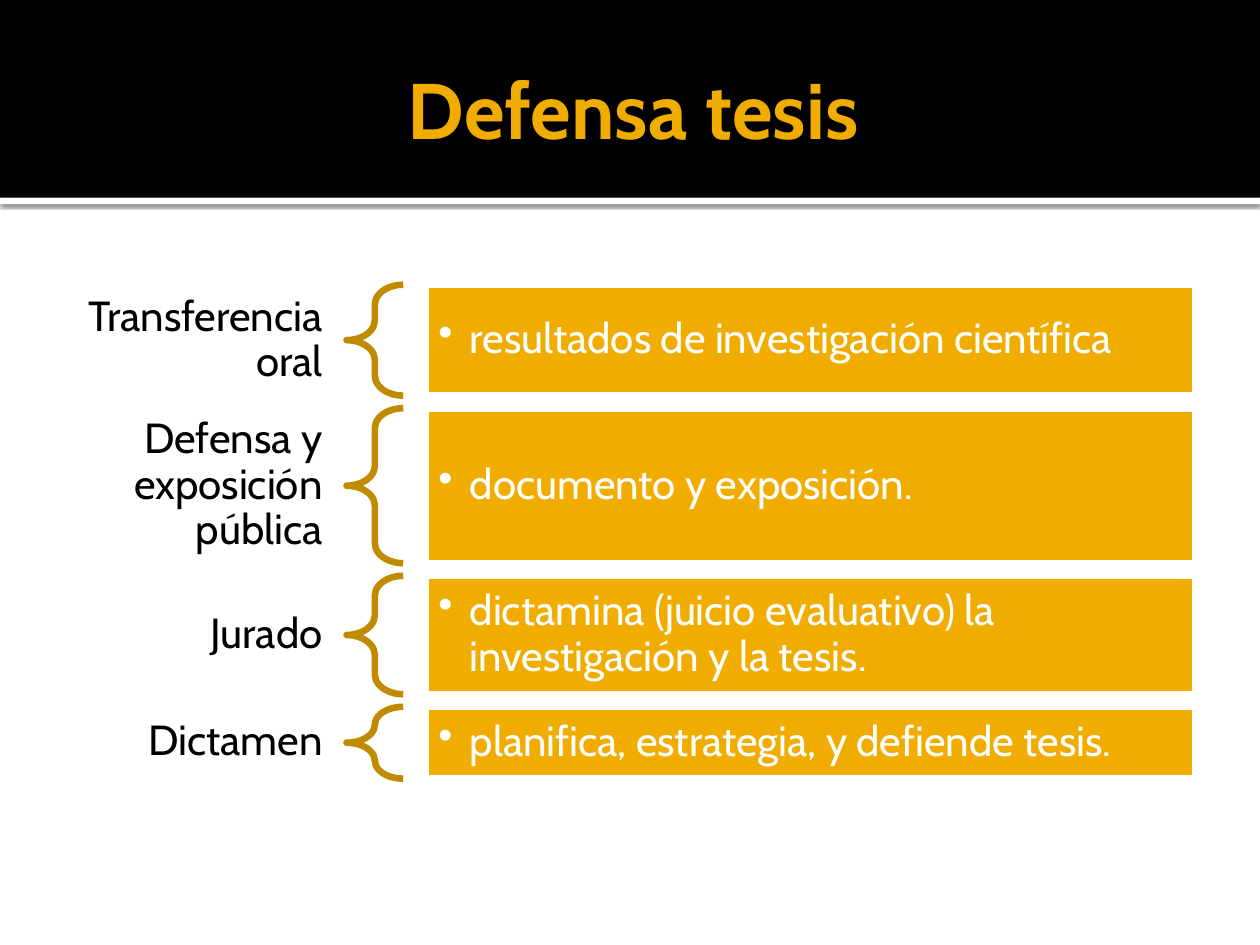
"""Builds the thesis defence slide: a title band above four braced rows."""
from lxml import etree
from pptx import Presentation
from pptx import util as u
from pptx.dml.color import RGBColor
from pptx.enum import shapes, text
from pptx.oxml.ns import qn

PX = 9144
FONT = "Cabin"
COLORS = {"black": "000000", "white": "FFFFFF", "amber": "F0AD00", "brace": "C08B00"}
ROWS = [
    ("Transferencia oral", "resultados de investigación científica", 88, 88),
    ("Defensa y exposición pública", "documento y exposición.", 123, 123),
    ("Jurado", "dictamina (juicio evaluativo) la investigación y la tesis.", 94, 52),
    ("Dictamen", "planifica, estrategia, y defiende tesis.", 57, 52),
]
ROW_GAP = 10


def color(name):
    """Return the named colour."""
    return RGBColor.from_string(COLORS[name])


def px(*lengths):
    """Turn px lengths into EMU."""
    return [u.Emu(length * PX) for length in lengths]


def add_figure(page, kind, box, fill=None, line=None):
    """Add a preset shape with an optional fill and line."""
    figure = page.shapes.add_shape(kind, *px(*box))
    if fill:
        figure.fill.solid()
        figure.fill.fore_color.rgb = color(fill)
    else:
        figure.fill.background()
    if line:
        figure.line.color.rgb = color(line)
        figure.line.width = u.Pt(3.78)
    else:
        figure.line.fill.background()
    figure.shadow.inherit = False
    return figure


def write(shape, words, size, ink, align, insets, bold=False):
    """Set one middle-anchored paragraph in a shape and return it."""
    frame = shape.text_frame
    frame.text = words
    frame.word_wrap = True
    frame.auto_size = text.MSO_AUTO_SIZE.NONE
    frame.vertical_anchor = text.MSO_ANCHOR.MIDDLE
    frame.margin_left, frame.margin_top, frame.margin_right, frame.margin_bottom = px(*insets)
    para = frame.paragraphs[0]
    para.alignment = align
    font = para.runs[0].font
    font.name, font.size, font.bold = FONT, u.Pt(size), bold
    font.color.rgb = color(ink)
    return para


def add_bullet(para, indent):
    """Give a paragraph a hanging round bullet."""
    props = para._p.get_or_add_pPr()
    props.set("marL", str(indent * PX))
    props.set("indent", str(-indent * PX))
    etree.SubElement(props, qn("a:buChar"), char="•")


def add_soft_shadow(shape):
    """Put a soft downward shadow under a shape."""
    effects = shape.element.spPr.find(qn("a:effectLst"))
    shadow = etree.SubElement(effects, qn("a:outerShdw"), blurRad=str(u.Pt(2.5)),
                              dist=str(u.Pt(0.8)), dir="5400000", rotWithShape="0")
    tint = etree.SubElement(shadow, qn("a:srgbClr"), val=COLORS["black"])
    etree.SubElement(tint, qn("a:alpha"), val="60000")


def add_header(page, left, top, width, height):
    """Draw the title band with its edge and place the title on it."""
    rectangle = shapes.MSO_SHAPE.RECTANGLE
    edge = add_figure(page, rectangle, (left, top + height, width, 5), "white")
    add_soft_shadow(edge)
    add_figure(page, rectangle, (left, top, width, height), "black")
    title = page.shapes.title
    title.left, title.top, title.width, title.height = px(left + 50, top + 17, width - 100, 137)
    write(title, "Defensa tesis", 45, "amber", text.PP_ALIGN.CENTER, (10, 5, 5, 5), bold=True)
    title.element.getparent().append(title.element)


def add_row(page, left, top, width, height, label, detail, label_height):
    """Draw a label, its brace and the bar that details it."""
    label_top = top + (height - label_height) // 2
    caption = page.shapes.add_textbox(*px(left, label_top, 225, label_height))
    para = write(caption, label, 24, "black", text.PP_ALIGN.RIGHT, (19, 7, 19, 7))
    para.line_spacing = 0.9

    brace = add_figure(page, shapes.MSO_SHAPE.LEFT_BRACE, (left + 225, top, 45, height),
                       line="brace")
    brace.adjustments[0] = 0.35
    brace.adjustments[1] = 0.5

    bar = add_figure(page, shapes.MSO_SHAPE.RECTANGLE,
                     (left + 288, top, width - 288, height), "amber", "white")
    para = write(bar, detail, 24, "white", text.PP_ALIGN.LEFT, (10, 10, 10, 10))
    para.level = 1
    para.line_spacing = 0.9
    add_bullet(para, 25)


def add_rows(page, left, top, width):
    """Stack the rows with equal gaps."""
    for label, detail, height, label_height in ROWS:
        add_row(page, left, top, width, height, label, detail, label_height)
        top += height + ROW_GAP


def main():
    """Build and save the deck."""
    deck = Presentation()
    deck.slide_width, deck.slide_height = px(1000, 750)
    page = deck.slides.add_slide(deck.slide_layouts[5])
    add_header(page, 0, 0, 1000, 157)
    add_rows(page, 50, 226, 899)
    deck.save("out.pptx")


if __name__ == "__main__":
    main()
